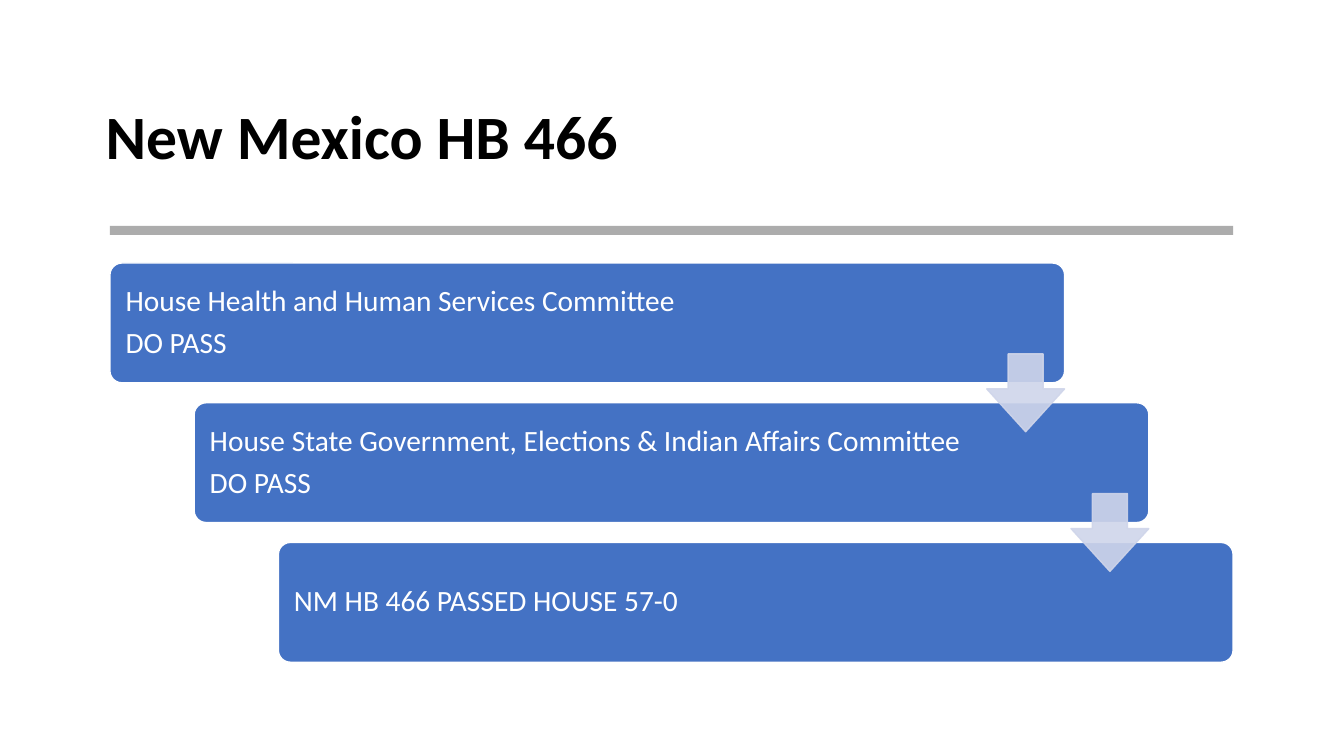
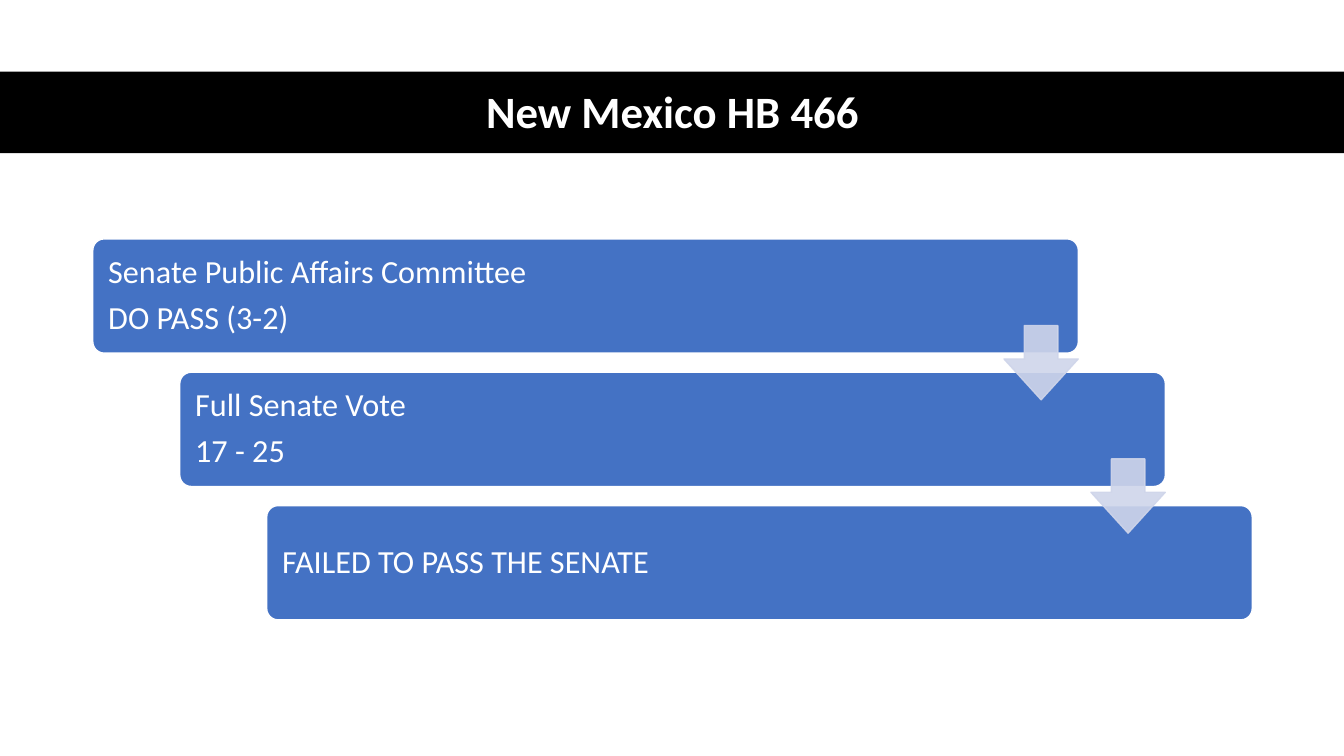
from collections import namedtuple

from lxml.etree import SubElement
from pptx import Presentation
from pptx.dml.color import RGBColor
from pptx.enum.shapes import MSO_SHAPE
from pptx.enum.text import MSO_ANCHOR, PP_ALIGN
from pptx.oxml.ns import qn
from pptx.util import Inches, Pt

# Shared look
BLACK = RGBColor(0x00, 0x00, 0x00)
WHITE = RGBColor(0xFF, 0xFF, 0xFF)
GRAY = RGBColor(0x80, 0x80, 0x80)
BLUE = RGBColor(0x44, 0x72, 0xC4)
PALE_BLUE = RGBColor(0xCF, 0xD5, 0xEA)
FONT = "Calibri"
TITLE = "New Mexico HB 466"
SLIDE_WIDTH, SLIDE_HEIGHT = 13.33, 7.5

# Staircase proportions, as shares of its whole box
STEP_WIDTH, STEP_HEIGHT = 0.85, 0.3
SHIFT_X, SHIFT_Y = 0.075, 0.35
ARROW_TOP = 0.2275
ARROW_SIZE = 0.65  # share of a step's height

Box = namedtuple("Box", "left top width height")


def add_text(shape, lines, size, color, bold=False, align=PP_ALIGN.LEFT,
             inset=0.1, space_after=0):
    frame = shape.text_frame
    frame_format = {
        "word_wrap": True,
        "vertical_anchor": MSO_ANCHOR.MIDDLE,
        "margin_left": Inches(inset),
        "margin_right": Inches(inset),
    }
    for name, value in frame_format.items():
        setattr(frame, name, value)
    paragraph_format = {"alignment": align, "line_spacing": 0.9,
                        "space_after": Pt(space_after)}
    font_format = {"name": FONT, "size": Pt(size), "bold": bold}
    for index, line in enumerate(lines):
        paragraph = frame.paragraphs[0] if index == 0 else frame.add_paragraph()
        paragraph.text = line
        for name, value in paragraph_format.items():
            setattr(paragraph, name, value)
        for name, value in font_format.items():
            setattr(paragraph.font, name, value)
        paragraph.font.color.rgb = color


def add_block(slide, kind, box, fill, line=None, opacity=100, adjustments=()):
    shape = slide.shapes.add_shape(kind, *map(Inches, box))
    shape.shadow.inherit = False
    for index, value in enumerate(adjustments):
        shape.adjustments[index] = value
    shape.fill.solid()
    shape.fill.fore_color.rgb = fill
    if line is None:
        shape.line.fill.background()
    else:
        shape.line.color.rgb = line
        shape.line.width = Pt(1)
    if opacity < 100:
        for color in shape.element.spPr.iter(qn("a:srgbClr")):
            SubElement(color, qn("a:alpha"), val=str(opacity * 1000))
    return shape


def add_title(slide, box, size, color, align=PP_ALIGN.LEFT):
    shape = slide.shapes.add_textbox(*map(Inches, box))
    add_text(shape, [TITLE], size, color, bold=True, align=align)


def add_staircase(slide, box, steps, size):
    width, height = box.width * STEP_WIDTH, box.height * STEP_HEIGHT
    side = height * ARROW_SIZE
    offsets = [(box.left + index * box.width * SHIFT_X,
                box.top + index * box.height * SHIFT_Y)
               for index in range(len(steps))]

    # Steps
    for (left, top), lines in zip(offsets, steps):
        step = add_block(slide, MSO_SHAPE.ROUNDED_RECTANGLE,
                         Box(left, top, width, height), BLUE, WHITE,
                         adjustments=[0.1])
        add_text(step, lines, size, WHITE, inset=0.12, space_after=size * 0.35)

    # Arrows between steps, flush with the right edge of the upper one
    for left, top in offsets[:-1]:
        arrow = Box(left + width - side, top + box.height * ARROW_TOP, side, side)
        add_block(slide, MSO_SHAPE.DOWN_ARROW, arrow, PALE_BLUE, PALE_BLUE,
                  opacity=90, adjustments=[0.45, 0.55])


def add_house_slide(slide):
    add_title(slide, Box(0.95, 0.66, 11.43, 1.45), 44, BLACK)
    add_block(slide, MSO_SHAPE.RECTANGLE, Box(1.09, 2.24, 11.14, 0.09), GRAY,
              opacity=65)
    add_staircase(slide, Box(1.09, 2.61, 11.14, 3.96), [
        ["House Health and Human Services Committee", "DO PASS"],
        ["House State Government, Elections & Indian Affairs Committee", "DO PASS"],
        ["NM HB 466 PASSED HOUSE 57-0"],
    ], 21)


def add_senate_slide(slide):
    add_block(slide, MSO_SHAPE.RECTANGLE, Box(0, 0.71, SLIDE_WIDTH, 0.81), BLACK)
    add_title(slide, Box(0.92, 0.74, 11.5, 0.78), 32, WHITE, PP_ALIGN.CENTER)
    add_staircase(slide, Box(0.92, 2.37, 11.5, 3.78), [
        ["Senate Public Affairs Committee", "DO PASS (3-2)"],
        ["Full Senate Vote", "17 - 25"],
        ["FAILED TO PASS THE SENATE"],
    ], 23)


def main():
    presentation = Presentation()
    presentation.slide_width = Inches(SLIDE_WIDTH)
    presentation.slide_height = Inches(SLIDE_HEIGHT)
    blank = presentation.slide_layouts[6]
    for build in (add_house_slide, add_senate_slide):
        build(presentation.slides.add_slide(blank))
    presentation.save("out.pptx")


if __name__ == "__main__":
    main()
